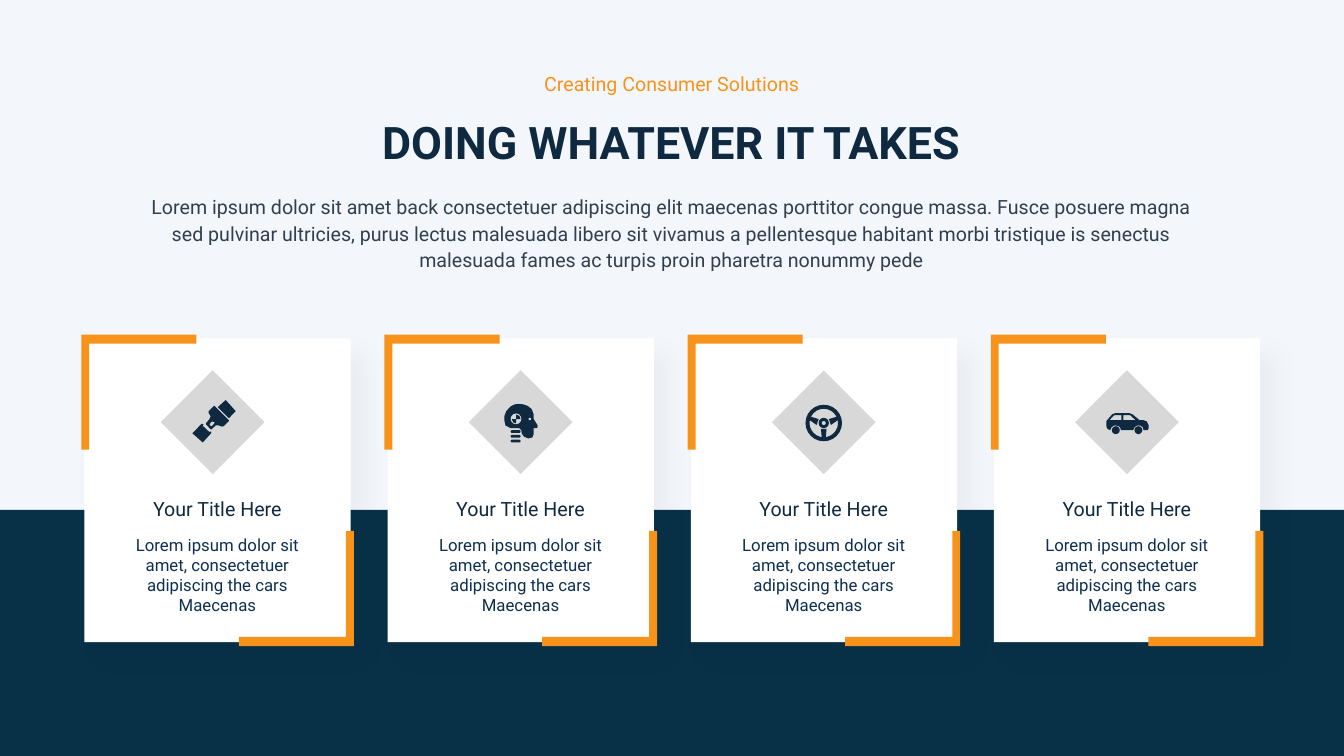
from lxml import etree
from pptx import Presentation
from pptx.dml.color import RGBColor
from pptx.enum.shapes import MSO_SHAPE as Preset
from pptx.enum.text import MSO_AUTO_SIZE as AutoSize, PP_ALIGN as Align
from pptx.oxml.ns import qn
from pptx.util import Cm, Pt

NAVY = RGBColor(0x0E, 0x29, 0x40)
BAND = RGBColor(0x08, 0x31, 0x48)
CARD_TEXT = RGBColor(0x0D, 0x2F, 0x51)
SLATE = RGBColor(0x32, 0x3F, 0x4F)
ORANGE = RGBColor(0xF7, 0x93, 0x1B)
GREY = RGBColor(0xD8, 0xD8, 0xD8)
WHITE = RGBColor(0xFF, 0xFF, 0xFF)
PALE = RGBColor(0xF3, 0xF6, 0xFB)

presentation = Presentation()
presentation.slide_width, presentation.slide_height = Cm(33.87), Cm(19.05)
slide = presentation.slides.add_slide(presentation.slide_layouts[6])
slide.background.fill.solid()
slide.background.fill.fore_color.rgb = PALE


def add_text(text, left, top, width, height, size, color, bold=False, spacing=None):
    frame = slide.shapes.add_textbox(Cm(left), Cm(top), Cm(width), Cm(height)).text_frame
    frame.word_wrap = True
    frame.auto_size = AutoSize.SHAPE_TO_FIT_TEXT
    paragraph = frame.paragraphs[0]
    paragraph.text = text
    paragraph.alignment = Align.CENTER
    paragraph.line_spacing = spacing
    font = paragraph.runs[0].font
    font.name, font.size, font.bold = "Roboto", Pt(size), bold
    font.color.rgb = color


def add_filled(outline, color, left, top, width=0, height=0):
    """Draw a preset shape, or a list of contours measured from (left, top)."""
    if isinstance(outline, list):
        contours = [[(Cm(left + x), Cm(top + y)) for x, y in contour] for contour in outline]
        builder = slide.shapes.build_freeform(*contours[0][0])
        builder.add_line_segments(contours[0][1:])
        for contour in contours[1:]:
            builder.move_to(*contour[0])
            builder.add_line_segments(contour[1:])
        shape = builder.convert_to_shape()
    else:
        shape = slide.shapes.add_shape(outline, Cm(left), Cm(top), Cm(width), Cm(height))
    shape.shadow.inherit = False
    shape.fill.solid()
    shape.fill.fore_color.rgb = color
    shape.line.fill.background()
    return shape


# Lower band and heading
add_filled(Preset.RECTANGLE, BAND, 0, 12.85, 33.87, 6.2)
add_text("DOING WHATEVER IT TAKES", 6.98, 2.77, 19.87, 1.62, 32, NAVY, bold=True)
add_text("Creating Consumer Solutions", 11.83, 1.69, 10.2, 0.86, 14, ORANGE)
add_text("Lorem ipsum dolor sit amet back consectetuer adipiscing elit maecenas porttitor "
         "congue massa. Fusce posuere magna sed pulvinar ultricies, purus lectus malesuada "
         "libero sit vivamus a pellentesque habitant morbi tristique is senectus malesuada "
         "fames ac turpis proin pharetra nonummy pede",
         3.27, 4.7, 27.31, 2.31, 14, SLATE, spacing=1.14)

# Cards with corner brackets and diamonds
CARD_TOP, CARD_WIDTH, CARD_HEIGHT = 8.53, 6.71, 7.65
ICON_Y, DIAMOND = 10.64, 1.85
top_left = [(-0.08, -0.1), (2.82, -0.1), (2.82, 0.13), (0.12, 0.13), (0.12, 2.8), (-0.08, 2.8)]
bottom_right = [(CARD_WIDTH - x, CARD_HEIGHT - y) for x, y in top_left]
icon_centers = []
for index, diamond_offset in enumerate([3.23, 3.35, 3.35, 3.35]):
    left = 2.13 + 7.64 * index
    card = add_filled(Preset.ROUNDED_RECTANGLE, WHITE, left, CARD_TOP, CARD_WIDTH, CARD_HEIGHT)
    card.adjustments[0] = 0
    effects = card._element.spPr.find(qn("a:effectLst"))
    shadow = etree.SubElement(effects, qn("a:outerShdw"), blurRad=str(Pt(18)),
                              dist=str(Pt(15)), dir="2700000", algn="tl", rotWithShape="0")
    shadow_color = etree.SubElement(shadow, qn("a:srgbClr"), val="000000")
    etree.SubElement(shadow_color, qn("a:alpha"), val="4000")

    add_filled([bottom_right, top_left], ORANGE, left, CARD_TOP)
    add_text("Lorem ipsum dolor sit amet, consectetuer adipiscing the cars Maecenas",
             left + 0.67, 13.34, 5.36, 2.31, 12, CARD_TEXT)
    add_text("Your Title Here", left + 0.67, 12.4, 5.36, 0.86, 14, NAVY)

    center = left + diamond_offset
    diamond = add_filled(Preset.RECTANGLE, GREY, center - DIAMOND / 2, ICON_Y - DIAMOND / 2,
                         DIAMOND, DIAMOND)
    diamond.rotation = 45
    icon_centers.append(center)
belt_x, head_x, wheel_x, car_x = icon_centers

# Seat belt: buckle with slot, strap, tongue
buckle = [(0.05, -0.41), (0.03, -0.41), (-0.1, -0.28), (-0.1, -0.23), (-0.05, -0.15),
          (-0.08, -0.08), (-0.17, 0.03), (-0.17, 0.05), (-0.05, 0.18), (-0.03, 0.18),
          (0.08, 0.08), (0.15, 0.08), (0.23, 0.11), (0.28, 0.1), (0.41, -0.03), (0.41, -0.05)]
slot = [(0.05, 0.02), (-0.02, 0.1), (-0.05, 0.1), (-0.08, 0.05), (-0.02, -0.02), (0.05, 0)]
strap = [(0.13, -0.38), (0.33, -0.56), (0.58, -0.28), (0.41, -0.1)]
tongue = [(-0.51, 0.28), (-0.28, 0.04), (-0.23, 0.05), (-0.25, 0.09), (-0.08, 0.25),
          (-0.05, 0.23), (-0.03, 0.27), (-0.25, 0.51)]
for contours in ([buckle, slot], [strap], [tongue]):
    add_filled(contours, NAVY, belt_x, ICON_Y)

# Crash-test head: profile, target, eye, neck
profile = [(0.43, 0.08), (0.33, -0.08), (0.33, -0.2), (0.28, -0.33), (0.18, -0.41),
           (0.07, -0.45), (-0.05, -0.46), (-0.15, -0.45), (-0.25, -0.4), (-0.36, -0.28),
           (-0.41, -0.15), (-0.41, -0.05), (-0.38, 0.08), (-0.25, 0.15), (-0.03, 0.15),
           (0.02, 0.2), (0.03, 0.28), (0.08, 0.36), (0.2, 0.41), (0.3, 0.38), (0.33, 0.3),
           (0.33, 0.15), (0.42, 0.15)]
quarter = [(0, 0), (-0.11, 0), (-0.08, 0.08), (0, 0.11)]
add_filled([profile], NAVY, head_x, ICON_Y)
add_filled(Preset.OVAL, GREY, head_x - 0.25, ICON_Y - 0.22, 0.27, 0.27)
add_filled([quarter, [(-x, -y) for x, y in quarter]], NAVY, head_x - 0.11, ICON_Y - 0.08)
add_filled(Preset.OVAL, GREY, head_x + 0.2, ICON_Y - 0.11, 0.06, 0.06)
for neck_top in (0.2, 0.32, 0.44):
    bar = add_filled(Preset.ROUNDED_RECTANGLE, NAVY, head_x - 0.25, ICON_Y + neck_top, 0.25, 0.07)
    bar.adjustments[0] = 0.5

# Steering wheel: rim, hub, spokes
wheel_y = ICON_Y + 0.02
for diameter, thickness in ((0.92, 0.11), (0.26, 0.3)):
    ring = add_filled(Preset.DONUT, NAVY, wheel_x - diameter / 2, wheel_y - diameter / 2,
                      diameter, diameter)
    ring.adjustments[0] = thickness
left_spoke = [(-0.38, -0.09), (-0.18, 0.05), (-0.13, -0.1), (-0.33, -0.16)]
right_spoke = [(-x, y) for x, y in left_spoke]
lower_spoke = [(-0.05, 0.38), (-0.07, 0.15), (0.07, 0.15), (0.05, 0.38)]
add_filled([left_spoke, right_spoke, lower_spoke], NAVY, wheel_x, wheel_y)

# Car: body with windows, tyres
body = [(0.42, -0.05), (0.32, -0.05), (0.14, -0.2), (0.06, -0.23), (-0.29, -0.23),
        (-0.37, -0.2), (-0.5, -0.05), (-0.52, -0.03), (-0.52, 0.1), (-0.49, 0.17),
        (-0.42, 0.2), (-0.39, 0.13), (-0.34, 0.09), (-0.28, 0.08), (-0.21, 0.1),
        (-0.17, 0.13), (-0.15, 0.2), (0.16, 0.2), (0.19, 0.13), (0.24, 0.09), (0.29, 0.08),
        (0.35, 0.09), (0.4, 0.13), (0.42, 0.2), (0.52, 0.2), (0.55, 0.15), (0.55, 0.08),
        (0.5, -0.02)]
front_window = [(-0.09, -0.05), (-0.09, -0.18), (0.06, -0.18), (0.09, -0.17), (0.22, -0.05)]
rear_window = [(-0.14, -0.05), (-0.44, -0.05), (-0.33, -0.17), (-0.29, -0.18), (-0.14, -0.18)]
add_filled([body, front_window, rear_window], NAVY, car_x, ICON_Y)
for tyre_x in (-0.28, 0.29):
    add_filled(Preset.OVAL, NAVY, car_x + tyre_x - 0.1, ICON_Y + 0.1, 0.2, 0.2)

presentation.save("out.pptx")
